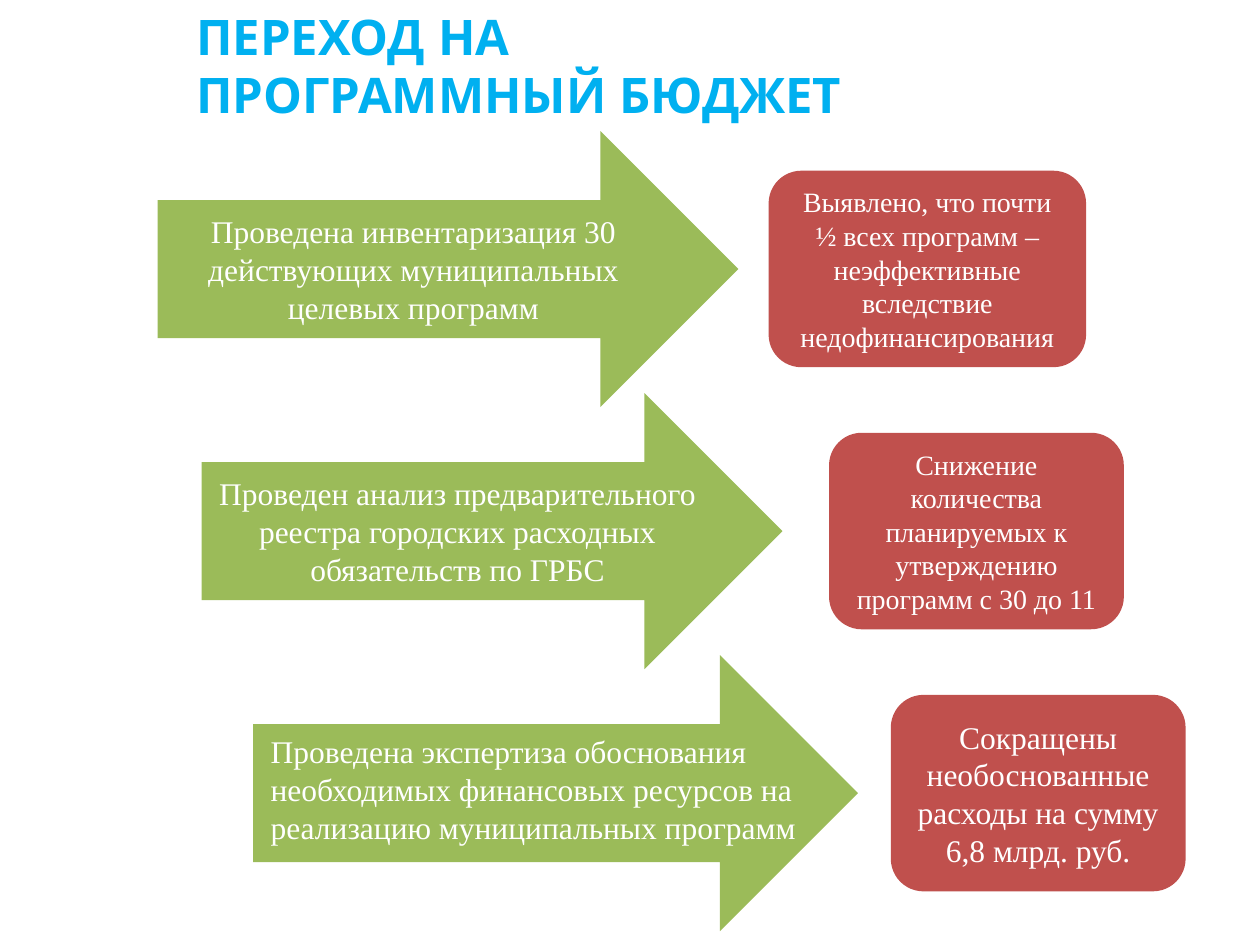
from pptx import Presentation
from pptx.dml.color import RGBColor
from pptx.enum.shapes import MSO_SHAPE as Shape
from pptx.enum.text import MSO_ANCHOR as Anchor, PP_ALIGN as Align
from pptx.util import Inches, Pt

COLORS = {"step": "9BBB59", "result": "C0504D", "title": "00B0F0", "text": "FFFFFF"}
BODY_FONT = "Times New Roman"
TITLE_FONT = "League Spartan"
FIRST_TOP, ROW_PITCH = 1.04, 2.08
ARROW_HEIGHT, RESULT_HEIGHT = 2.19, 1.56

STEPS = [
    {"step": "Проведена инвентаризация 30 действующих муниципальных целевых программ",
     "result": "Выявлено, что почти ½ всех программ – неэффективные вследствие недофинансирования",
     "arrow": (1.25, 4.61), "card": (6.1, 2.52), "size": 16},
    {"step": "Проведен анализ предварительного реестра городских расходных обязательств по ГРБС",
     "result": "Снижение количества планируемых к утверждению программ с 30 до 11",
     "arrow": (1.6, 4.61), "card": (6.58, 2.34), "size": 16},
    {"step": "Проведена экспертиза обоснования необходимых финансовых ресурсов "
             "на реализацию муниципальных программ",
     "result": "Сокращены необоснованные расходы на сумму 6,8 млрд. руб.",
     "arrow": (2.01, 4.8), "card": (7.07, 2.34), "size": 18, "caption": (0.04, 0.56, 5, 1.01)},
]


def write(holder, text, size, color="text", font=BODY_FONT, align=Align.CENTER,
          anchor=Anchor.MIDDLE, bold=False):
    frame = holder.text_frame
    frame.word_wrap = True
    frame.vertical_anchor = anchor
    frame.text = text
    for paragraph in frame.paragraphs:
        paragraph.alignment = align
        for run in paragraph.runs:
            run.font.size = Pt(size)
            run.font.name = font
            run.font.bold = bold
            run.font.color.rgb = RGBColor.from_string(COLORS[color])


def add_block(slide, kind, color, left, top, width, height):
    block = slide.shapes.add_shape(
        kind, Inches(left), Inches(top), Inches(width), Inches(height))
    block.shadow.inherit = False
    block.fill.solid()
    block.fill.fore_color.rgb = RGBColor.from_string(COLORS[color])
    block.line.fill.background()
    return block


def add_title(slide, left, top, width, height):
    title = slide.shapes.add_textbox(
        Inches(left), Inches(top), Inches(width), Inches(height))
    write(title, "ПЕРЕХОД НА\nПРОГРАММНЫЙ БЮДЖЕТ", 28, "title", TITLE_FONT,
          Align.LEFT, Anchor.TOP, bold=True)


def add_step(slide, top, row):
    left, width = row["arrow"]
    arrow = add_block(slide, Shape.RIGHT_ARROW, "step", left, top, width, ARROW_HEIGHT)
    if "caption" in row:
        dx, dy, caption_width, caption_height = row["caption"]
        caption = slide.shapes.add_textbox(
            Inches(left + dx), Inches(top + dy), Inches(caption_width), Inches(caption_height))
        write(caption, row["step"], 18, align=Align.LEFT, anchor=Anchor.TOP)
    else:
        write(arrow, row["step"], 18)

    card_left, card_width = row["card"]
    card_top = top + (ARROW_HEIGHT - RESULT_HEIGHT) / 2
    card = add_block(slide, Shape.ROUNDED_RECTANGLE, "result",
                     card_left, card_top, card_width, RESULT_HEIGHT)
    write(card, row["result"], row["size"])


def main():
    deck = Presentation()
    deck.slide_width, deck.slide_height = Inches(10), Inches(7.5)
    slide = deck.slides.add_slide(deck.slide_layouts[6])
    for index, row in enumerate(STEPS):
        add_step(slide, FIRST_TOP + index * ROW_PITCH, row)
    add_title(slide, 1.46, 0, 7.17, 1.04)
    deck.save("out.pptx")


if __name__ == "__main__":
    main()
